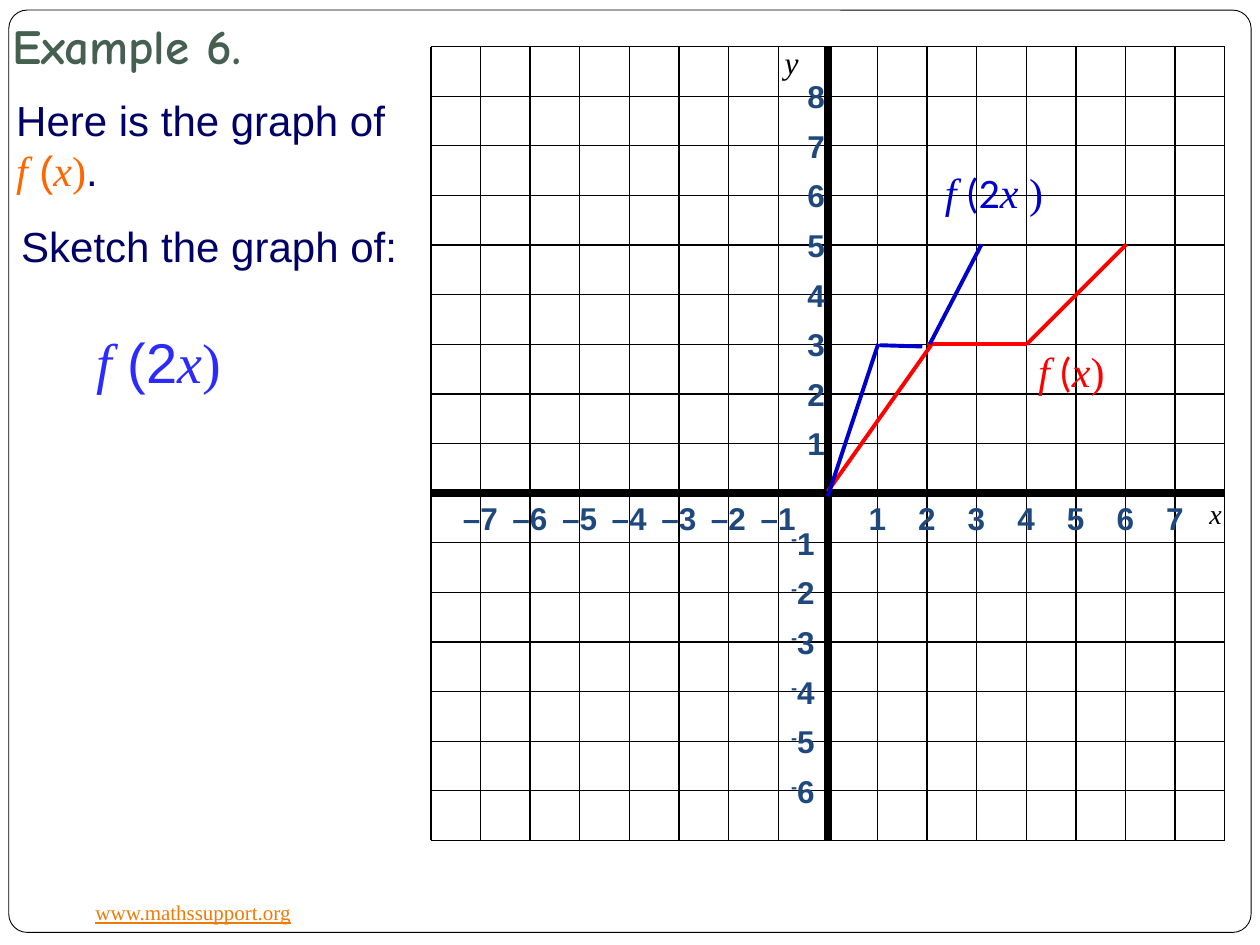
from typing import NamedTuple

from lxml.etree import SubElement
from pptx import Presentation
from pptx.dml.color import RGBColor
from pptx.enum.shapes import MSO_CONNECTOR, MSO_SHAPE
from pptx.enum.text import MSO_ANCHOR, MSO_AUTO_SIZE, PP_ALIGN
from pptx.oxml.ns import qn
from pptx.util import Inches, Pt

BLACK = RGBColor(0x00, 0x00, 0x00)
WHITE = RGBColor(0xFF, 0xFF, 0xFF)
GREEN = RGBColor(0x45, 0x5F, 0x51)
NAVY = RGBColor(0x01, 0x00, 0x66)
ORANGE = RGBColor(0xFF, 0x66, 0x00)
LINK_ORANGE = RGBColor(0xEE, 0x7B, 0x08)
RED = RGBColor(0xFF, 0x00, 0x00)
BLUE = RGBColor(0x00, 0x00, 0xCC)
BRIGHT_BLUE = RGBColor(0x2B, 0x2B, 0xFF)
LABEL_BLUE = RGBColor(0x1F, 0x49, 0x7D)

SERIF, SANS, ROUND, HAND = "Times New Roman", "Arial", "Calibri", "Comic Neue"

# The grid has 16 by 16 cells, with the origin in column 8, row 9
GRID_LEFT, GRID_TOP, GRID_SIZE, CELLS = 3.42, 0.37, 6.3, 16
STEP = GRID_SIZE / CELLS
ORIGIN_X = GRID_LEFT + 8 * STEP
ORIGIN_Y = GRID_TOP + 9 * STEP
INSET = 0.1


class Span(NamedTuple):
    text: str
    font: str | None = None
    color: RGBColor | None = None
    italic: bool | None = None
    raised: bool = False


class Label(NamedTuple):
    left: float
    top: float
    width: float
    height: float
    spans: list[Span]
    size: float
    font: str | None = None
    color: RGBColor | None = None
    bold: bool | None = None
    italic: bool | None = None
    wrap: bool = False
    underline: bool | None = None
    tabs: tuple[float, ...] = ()


class Segment(NamedTuple):
    start: tuple[float, float]
    end: tuple[float, float]
    color: RGBColor = BLACK
    weight: float = 0.75


def write_label(para, label: Label) -> None:
    if label.tabs:
        tab_list = SubElement(para._p.get_or_add_pPr(), qn("a:tabLst"))
        for position in label.tabs:
            SubElement(tab_list, qn("a:tab"), pos=str(Inches(position)), algn="ctr")
    font = para.font
    font.size, font.name = Pt(label.size), label.font
    font.bold, font.italic, font.underline = label.bold, label.italic, label.underline
    if label.color is not None:
        font.color.rgb = label.color
    for span in label.spans:
        run = para.add_run()
        run.text = span.text
        if span.font:
            run.font.name = span.font
        if span.italic is not None:
            run.font.italic = span.italic
        if span.color is not None:
            run.font.color.rgb = span.color
        if span.raised:
            run.font._element.set("baseline", "30000")


def add_label(page, label: Label) -> None:
    box = page.shapes.add_textbox(Inches(label.left), Inches(label.top),
                                  Inches(label.width), Inches(label.height))
    frame = box.text_frame
    frame.word_wrap = label.wrap
    frame.auto_size = MSO_AUTO_SIZE.SHAPE_TO_FIT_TEXT
    write_label(frame.paragraphs[0], label)


def add_segment(page, segment: Segment) -> None:
    points = [Inches(value) for value in (*segment.start, *segment.end)]
    line = page.shapes.add_connector(MSO_CONNECTOR.STRAIGHT, *points)
    line.line.color.rgb = segment.color
    line.line.width = Pt(segment.weight)
    SubElement(line._element.spPr, qn("a:effectLst"))


def add_panel(page, kind, left: float, top: float, width: float, height: float):
    panel = page.shapes.add_shape(kind, Inches(left), Inches(top),
                                  Inches(width), Inches(height))
    panel.shadow.inherit = False
    panel.fill.solid()
    panel.fill.fore_color.rgb = WHITE
    return panel


def function_spans(opening: str, font: str, variable: str = "x") -> list[Span]:
    return [Span("f", SERIF, italic=True), Span(opening, font),
            Span(variable, SERIF, italic=True), Span(")", SERIF)]


def add_grid(page) -> None:
    right, bottom = GRID_LEFT + GRID_SIZE, GRID_TOP + GRID_SIZE
    for index in range(CELLS + 1):
        x, y = GRID_LEFT + index * STEP, GRID_TOP + index * STEP
        add_segment(page, Segment((x, GRID_TOP), (x, bottom)))
        add_segment(page, Segment((GRID_LEFT, y), (right, y)))
    add_segment(page, Segment((ORIGIN_X, GRID_TOP), (ORIGIN_X, bottom), weight=4.5))
    add_segment(page, Segment((GRID_LEFT, ORIGIN_Y), (right, ORIGIN_Y), weight=4.5))


def add_axis_numbers(page) -> None:
    style = dict(size=18, font=SANS, color=LABEL_BLUE, bold=True, wrap=True)
    # One row of numbers on each side of the origin, centred on the grid lines
    for left, width, numbers in ((6.58, 3.18, range(1, 8)), (3.3, 3.28, range(-7, 0))):
        text = "".join(f"\t{number}" for number in numbers).replace("-", "–")
        tabs = tuple(ORIGIN_X + number * STEP - left - INSET for number in numbers)
        add_label(page, Label(left, 3.91, width, 0.4, [Span(text)], tabs=tabs, **style))
    for number in range(1, 9):
        top = ORIGIN_Y - number * STEP - 0.2
        add_label(page, Label(6.31, top, 0.54, 0.4, [Span(str(number))], **style))
    for number in range(1, 7):
        top = ORIGIN_Y + number * STEP - 0.2
        spans = [Span("-", raised=True), Span(str(number))]
        add_label(page, Label(6.18, top, 0.54, 0.4, spans, **style))


def main() -> None:
    deck = Presentation()
    deck.slide_width, deck.slide_height = Inches(10), Inches(7.5)
    page = deck.slides.add_slide(deck.slide_layouts[5])

    # Frame and web address
    border = add_panel(page, MSO_SHAPE.ROUNDED_RECTANGLE, 0.07, 0.08, 9.86, 7.32)
    border.adjustments[0] = 0.02
    border.line.color.rgb = BLACK
    border.line.width = Pt(0.5)
    add_label(page, Label(0.66, 7.09, 1.77, 0.3, [Span("www.mathssupport.org")],
                          12, SERIF, LINK_ORANGE, underline=True))

    # Title, brought in front of the frame
    title = page.shapes.title
    page.shapes._spTree.append(title._element)
    title.left, title.top = Inches(0), Inches(0.18)
    title.width, title.height = Inches(2.58), Inches(0.51)
    frame = title.text_frame
    frame.vertical_anchor = MSO_ANCHOR.BOTTOM
    frame.auto_size = MSO_AUTO_SIZE.NONE
    frame.margin_bottom = Inches(0.1)
    frame.paragraphs[0].alignment = PP_ALIGN.LEFT
    write_label(frame.paragraphs[0], Label(0, 0.18, 2.58, 0.51, [Span("Example 6.")],
                                           28, HAND, GREEN, bold=True))

    # Task
    add_label(page, Label(0.07, 1.7, 3.21, 0.5, [Span("Sketch the graph of:")],
                          24, SANS, NAVY))
    given = [span._replace(color=ORANGE) for span in function_spans(" (", SANS)]
    add_label(page, Label(0.03, 0.7, 3.19, 0.91,
                          [Span("Here is the graph of ", SANS, NAVY), *given,
                           Span(".", SANS, NAVY)], 24, wrap=True))
    add_label(page, Label(0.67, 2.55, 1.2, 0.64, function_spans(" (2", SANS),
                          32, color=BRIGHT_BLUE))

    # Axes
    y_name = add_panel(page, MSO_SHAPE.RECTANGLE, 6.13, 0.29, 0.53, 0.55)
    y_name.line.fill.background()
    y_name.text_frame.vertical_anchor = MSO_ANCHOR.TOP
    y_name.text_frame.paragraphs[0].alignment = PP_ALIGN.LEFT
    write_label(y_name.text_frame.paragraphs[0],
                Label(6.13, 0.29, 0.53, 0.55, [Span("y")], 18, SERIF, BLACK, italic=True))
    add_grid(page)
    add_label(page, Label(9.5, 3.89, 0.35, 0.4, [Span("x")], 16, SERIF, BLACK,
                          italic=True, wrap=True))
    add_axis_numbers(page)

    # Graphs with their names
    graphs = [
        (RED, [((6.57, 3.9), (7.39, 2.74)), ((7.36, 2.73), (8.15, 2.73)),
               ((8.15, 2.73), (8.94, 1.94))]),
        (BLUE, [((6.97, 2.73), (6.57, 3.94)), ((6.98, 2.74), (7.32, 2.75)),
                ((7.79, 1.94), (7.38, 2.73))]),
    ]
    for color, pieces in graphs:
        for start, end in pieces:
            add_segment(page, Segment(start, end, color, 2.25))
    add_label(page, Label(8.14, 2.69, 0.73, 0.5, function_spans(" (", ROUND),
                          24, color=RED))
    add_label(page, Label(7.4, 1.27, 0.99, 0.5, function_spans(" (2", ROUND, "x "),
                          24, color=BLUE))

    deck.save("out.pptx")


if __name__ == "__main__":
    main()
